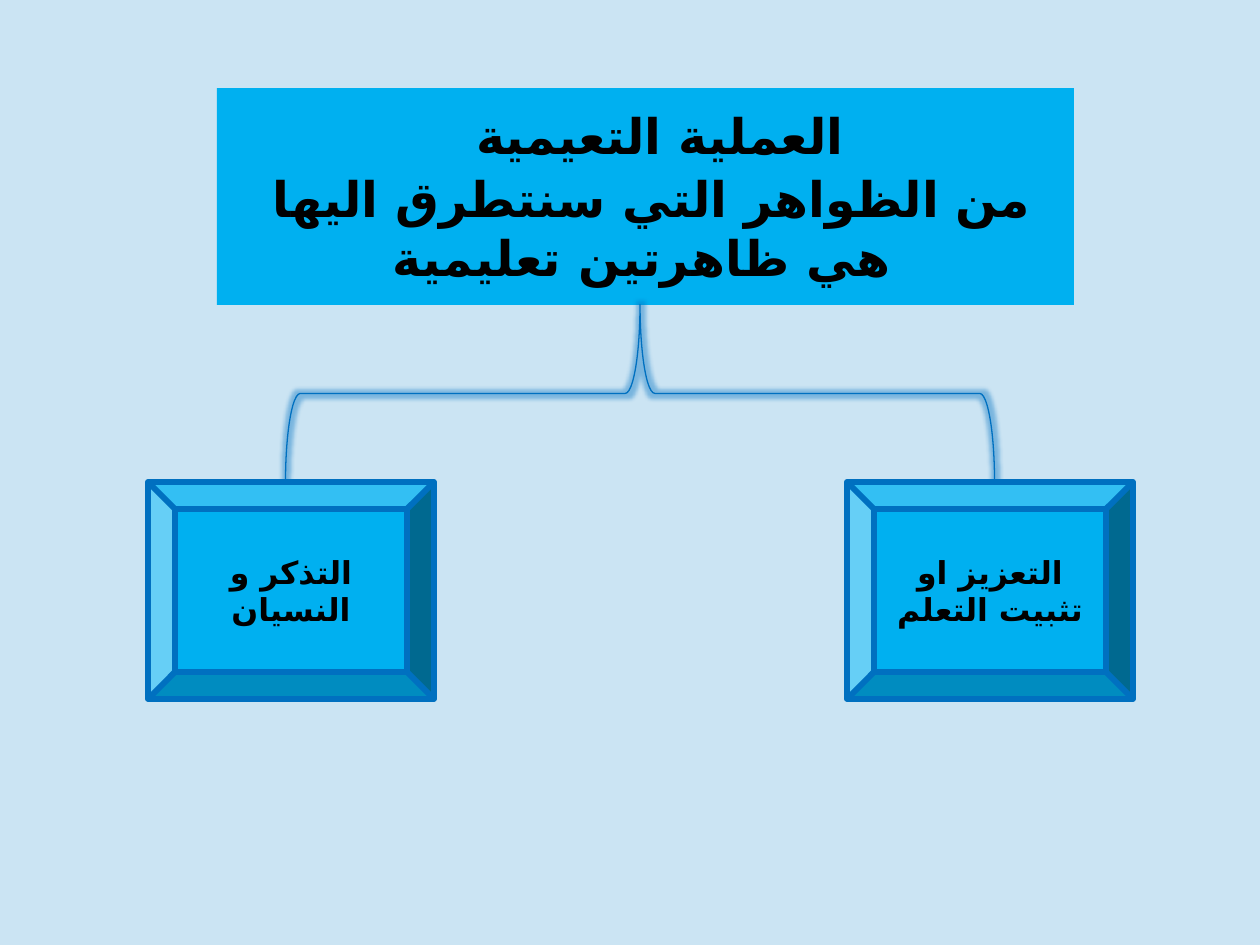
import lxml.etree
import pptx
import pptx.dml.color
import pptx.enum.shapes
import pptx.enum.text
import pptx.oxml.ns
import pptx.util

SKY = pptx.dml.color.RGBColor(0xCB, 0xE4, 0xF3)
CYAN = pptx.dml.color.RGBColor(0x00, 0xB0, 0xF0)
BLUE = pptx.dml.color.RGBColor(0x00, 0x70, 0xC0)
BLACK = pptx.dml.color.RGBColor(0x00, 0x00, 0x00)
SHAPE = pptx.enum.shapes.MSO_SHAPE
ANCHOR = pptx.enum.text.MSO_ANCHOR
FONT = "DejaVu Sans"


def px(length):
    return pptx.util.Emu(round(length * 914400 / 126))


def assign(target, values):
    for name, value in values.items():
        setattr(target, name, value)


def add_element(parent, tag, **attributes):
    return lxml.etree.SubElement(parent, pptx.oxml.ns.qn(tag), attributes)


class Diagram:
    """Draw the elements of a right-to-left tree diagram on one page."""

    def __init__(self, page):
        self.page = page
        page.background.fill.solid()
        page.background.fill.fore_color.rgb = SKY

    def paint(self, shape, color):
        shape.fill.solid()
        shape.fill.fore_color.rgb = color

    def shape(self, kind, left, top, width, height, line_width):
        box = self.page.shapes.add_shape(kind, px(left), px(top), px(width), px(height))
        box.shadow.inherit = False
        box.line.color.rgb = BLUE
        box.line.width = pptx.util.Pt(line_width)
        return box

    def label(self, box, lines, size, frame, gap=0, hang=0):
        assign(box.text_frame, {"word_wrap": True, **frame})
        box.text_frame.text = "\n".join(lines)
        for index, para in enumerate(box.text_frame.paragraphs):
            assign(para, {
                "alignment": pptx.enum.text.PP_ALIGN.CENTER,
                "space_before": pptx.util.Pt(gap if index else 0),
            })
            properties = para._p.get_or_add_pPr()
            properties.set("rtl", "1")
            properties.set("marL", str(px(hang)))
            properties.set("indent", str(-px(hang)))
            for span in para.runs:
                assign(span.font, {"name": FONT, "size": pptx.util.Pt(size), "bold": True})
                span.font.color.rgb = BLACK
                add_element(span._r.get_or_add_rPr(), "a:cs", typeface=FONT)

    def heading(self, lines, left, top, width, height):
        box = self.page.shapes.title
        assign(box, {"left": px(left), "top": px(top), "width": px(width), "height": px(height)})
        self.paint(box, CYAN)
        frame = {
            "vertical_anchor": ANCHOR.TOP,
            "auto_size": pptx.enum.text.MSO_AUTO_SIZE.NONE,
            "margin_left": px(25),
            "margin_top": px(17),
            "margin_right": px(13),
            "margin_bottom": px(6),
        }
        self.label(box, lines, 28, frame, gap=2.5, hang=37)

    def brace(self, left, top, width, height):
        brace = self.shape(SHAPE.LEFT_BRACE, left, top, width, height, 0.75)
        brace.rotation = 90
        brace.fill.background()
        effects = brace._element.spPr.find(pptx.oxml.ns.qn("a:effectLst"))
        glow = add_element(effects, "a:glow", rad=str(pptx.util.Pt(5)))
        color = add_element(glow, "a:srgbClr", val=str(BLUE))
        add_element(color, "a:alpha", val="40000")

    def branch(self, text, left, top, width, height):
        box = self.shape(SHAPE.BEVEL, left, top, width, height, 3.35)
        self.paint(box, CYAN)
        self.label(box, [text], 18, {"vertical_anchor": ANCHOR.MIDDLE})


def main():
    deck = pptx.Presentation()
    assign(deck, {"slide_width": px(1260), "slide_height": px(945)})
    diagram = Diagram(deck.slides.add_slide(deck.slide_layouts[5]))
    diagram.heading(
        ["العملية التعيمية ", "من الظواهر التي سنتطرق اليها هي ظاهرتين تعليمية "],
        217, 88, 857, 217,
    )
    diagram.brace(551, 39, 178, 709)
    for text, left in (("التعزيز او تثبيت التعلم", 847), ("التذكر و النسيان", 148)):
        diagram.branch(text, left, 482, 286, 217)
    deck.save("out.pptx")


if __name__ == "__main__":
    main()
